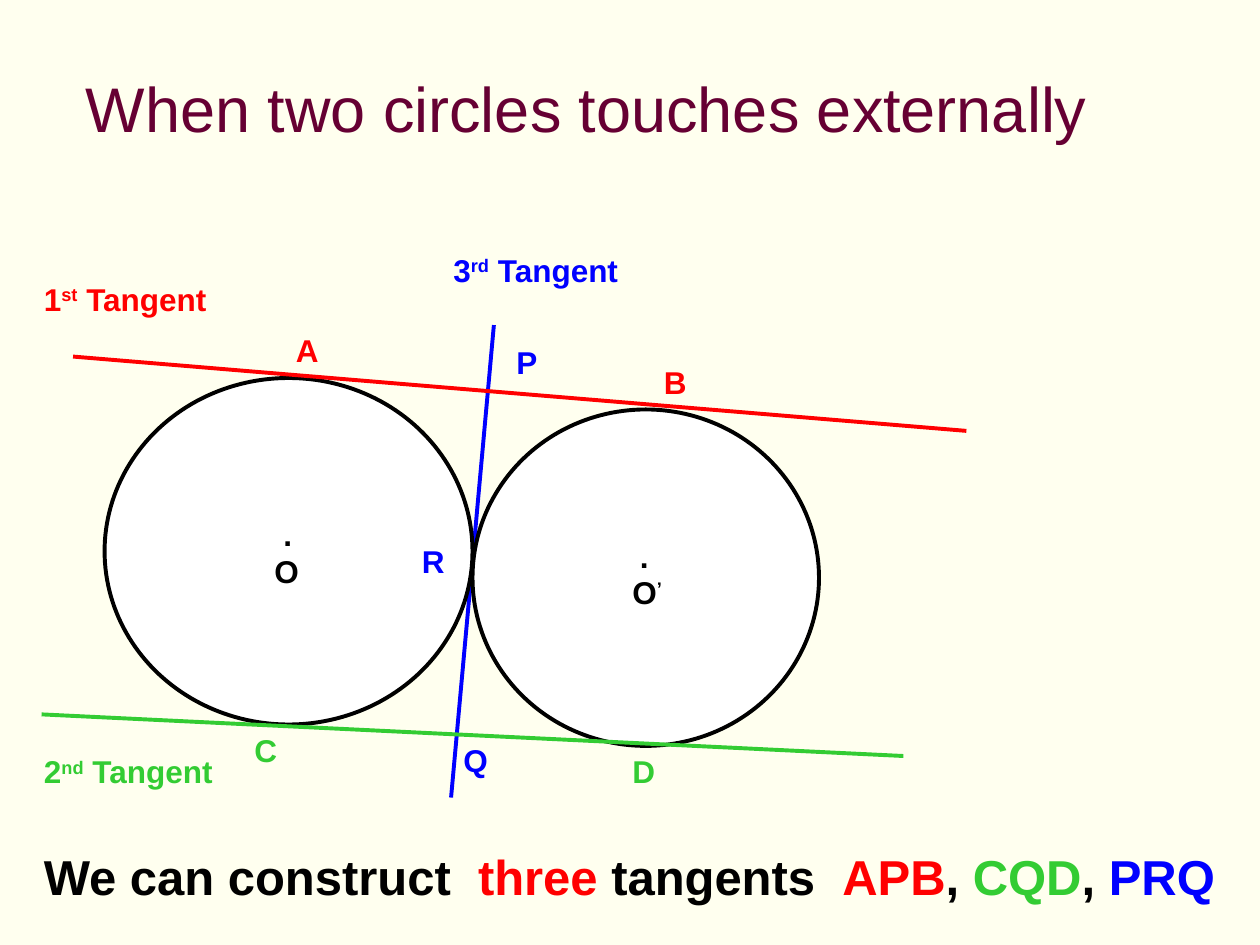
"""Build a slide showing the three common tangents of two touching circles."""
from typing import NamedTuple

from lxml.etree import SubElement
from pptx import Presentation
from pptx.dml.color import RGBColor
from pptx.enum.shapes import MSO_CONNECTOR as Connector, MSO_SHAPE as Shape
from pptx.enum.text import MSO_ANCHOR as Anchor, MSO_AUTO_SIZE as AutoSize, PP_ALIGN as Align
from pptx.oxml.ns import qn
from pptx.util import Inches, Pt

RED, GREEN, BLUE, BLACK = "FF0000", "33CC33", "0000FF", "000000"
WHITE, CREAM, PLUM = "FFFFFF", "FFFFEF", "660033"
LINE_WIDTH = Pt(2.25)
LABEL_HEIGHT = 0.4


class Circle(NamedTuple):
    left: float
    top: float
    width: float
    height: float


class Tangent(NamedTuple):
    start: tuple[float, float]
    end: tuple[float, float]
    color: str


class Piece(NamedTuple):
    text: str
    color: str
    raised: bool = False


class Label(NamedTuple):
    left: float
    top: float
    width: float
    color: str
    text: str
    raised: str = ""
    rest: str = ""


CIRCLES = [Circle(0.83, 3, 2.92, 2.75), Circle(3.75, 3.25, 2.75, 2.67)]
INNER_TANGENT = Tangent((3.92, 2.58), (3.58, 6.33), BLUE)
OUTER_TANGENTS = [
    Tangent((0.58, 2.83), (7.67, 3.42), RED),
    Tangent((0.33, 5.67), (7.17, 6), GREEN),
]
LABELS = [
    Label(2.25, 2.58, 0.38, RED, "A"),
    Label(5.17, 2.83, 0.38, RED, "B"),
    Label(1.92, 5.75, 0.38, GREEN, "C"),
    Label(4.92, 5.92, 0.38, GREEN, "D"),
    Label(4, 2.67, 0.37, BLUE, "P"),
    Label(3.58, 5.83, 0.4, BLUE, "Q"),
    Label(3.25, 4.25, 0.38, BLUE, "R"),
    Label(2.08, 4.33, 0.4, BLACK, "O"),
    Label(4.92, 4.5, 0.44, BLACK, "O", "’"),
    Label(2.15, 4.04, 0.27, BLACK, "."),
    Label(4.98, 4.21, 0.27, BLACK, "."),
    Label(0.25, 2.17, 1.53, RED, "1", "st", " Tangent"),
    Label(0.25, 5.92, 1.58, GREEN, "2", "nd", " Tangent"),
    Label(3.5, 1.94, 1.55, BLUE, "3", "rd", " Tangent"),
]
CONCLUSION = [
    Piece("We can construct  ", BLACK),
    Piece("three", RED),
    Piece(" tangents  ", BLACK),
    Piece("APB", RED),
    Piece(", ", BLACK),
    Piece("CQD", GREEN),
    Piece(", ", BLACK),
    Piece("PRQ", BLUE),
]


def rgb(color: str) -> RGBColor:
    return RGBColor.from_string(color)


def apply_format(target, values: dict) -> None:
    for name, value in values.items():
        setattr(target, name, value)


def write_pieces(paragraph, pieces: list[Piece], size: float, bold: bool) -> None:
    for piece in pieces:
        run = paragraph.add_run()
        run.text = piece.text
        apply_format(run.font, {"name": "Arial", "size": Pt(size), "bold": bold})
        run.font.color.rgb = rgb(piece.color)
        if piece.raised:
            run._r.get_or_add_rPr().set("baseline", "30000")


def add_text(slide, box: tuple, pieces: list[Piece], size: float, wrap: bool) -> None:
    frame = slide.shapes.add_textbox(*map(Inches, box)).text_frame
    apply_format(frame, {"word_wrap": wrap, "auto_size": AutoSize.SHAPE_TO_FIT_TEXT})
    write_pieces(frame.paragraphs[0], pieces, size, bold=True)


def add_label(slide, label: Label) -> None:
    pieces = [Piece(label.text, label.color), Piece(label.raised, label.color, True),
              Piece(label.rest, label.color)]
    box = (label.left, label.top, label.width, LABEL_HEIGHT)
    add_text(slide, box, [piece for piece in pieces if piece.text], 18, wrap=False)


def add_circle(slide, circle: Circle) -> None:
    shape = slide.shapes.add_shape(Shape.OVAL, *map(Inches, circle))
    shape.shadow.inherit = False
    shape.fill.solid()
    shape.fill.fore_color.rgb = rgb(WHITE)
    shape.line.color.rgb = rgb(BLACK)
    shape.line.width = LINE_WIDTH


def add_tangent(slide, tangent: Tangent) -> None:
    ends = map(Inches, tangent.start + tangent.end)
    connector = slide.shapes.add_connector(Connector.STRAIGHT, *ends)
    connector.line.color.rgb = rgb(tangent.color)
    connector.line.width = LINE_WIDTH
    SubElement(connector._element.spPr, qn("a:effectLst"))


def format_title(slide) -> None:
    title = slide.shapes.title
    apply_format(title, {"left": Inches(0.58), "top": Inches(0.5),
                         "width": Inches(8.58), "height": Inches(0.7)})
    apply_format(title.text_frame, {"word_wrap": True, "auto_size": AutoSize.NONE,
                                    "vertical_anchor": Anchor.TOP})
    paragraph = title.text_frame.paragraphs[0]
    paragraph.alignment = Align.LEFT
    write_pieces(paragraph, [Piece("When two circles touches externally", PLUM)], 36, bold=False)


def main() -> None:
    presentation = Presentation()
    apply_format(presentation, {"slide_width": Inches(10), "slide_height": Inches(7.5)})
    slide = presentation.slides.add_slide(presentation.slide_layouts[5])
    slide.background.fill.solid()
    slide.background.fill.fore_color.rgb = rgb(CREAM)
    format_title(slide)
    add_tangent(slide, INNER_TANGENT)
    for circle in CIRCLES:
        add_circle(slide, circle)
    for tangent in OUTER_TANGENTS:
        add_tangent(slide, tangent)
    for label in LABELS:
        add_label(slide, label)
    add_text(slide, (0.25, 6.67, 9.58, 0.57), CONCLUSION, 28, wrap=True)
    presentation.save("out.pptx")


if __name__ == "__main__":
    main()
